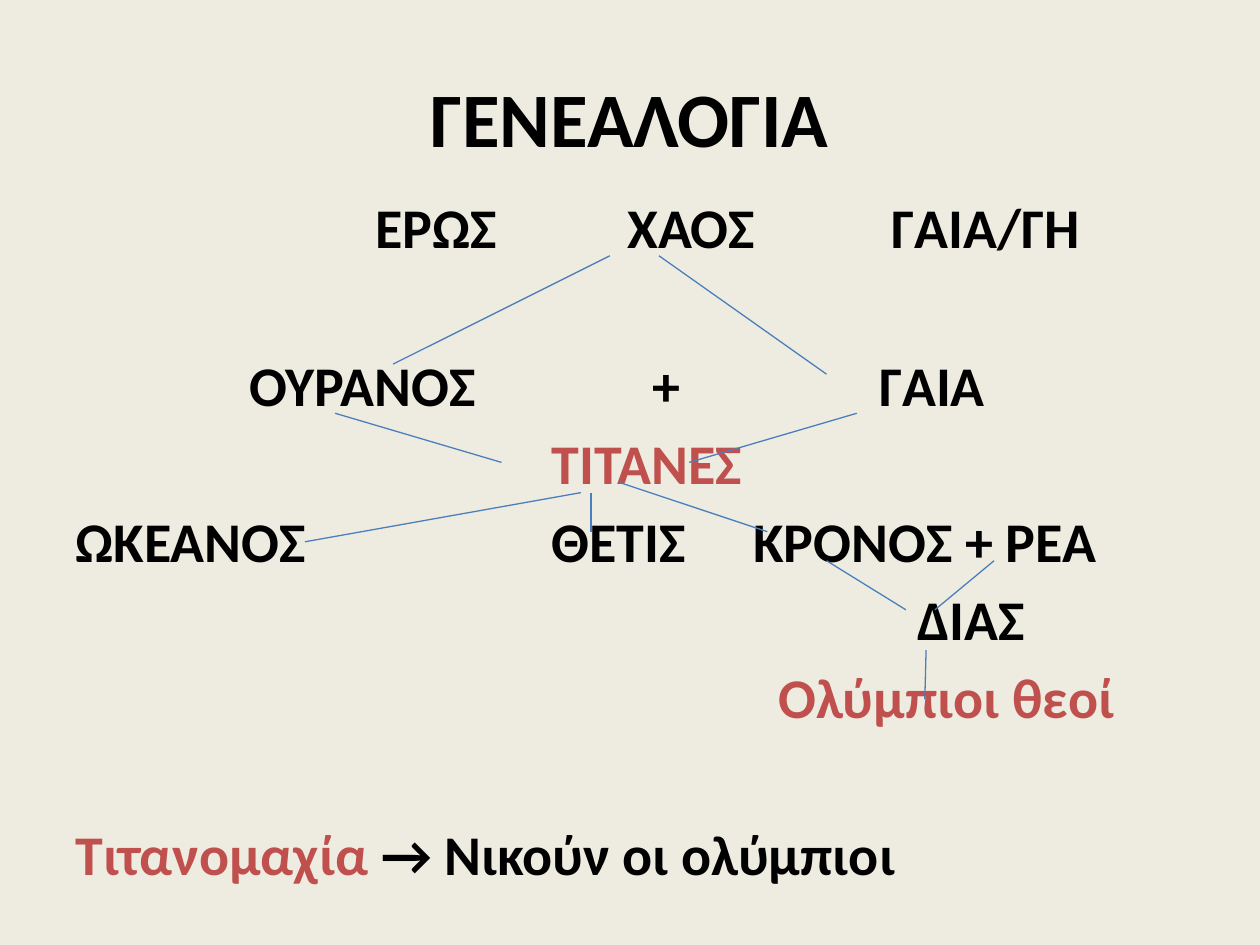
from dataclasses import dataclass

from lxml.etree import SubElement as Sub
from pptx import Presentation
from pptx.dml.color import RGBColor as Rgb
from pptx.enum.shapes import MSO_CONNECTOR as Conn
from pptx.enum.text import MSO_ANCHOR as Anchor, MSO_AUTO_SIZE as Fit, PP_ALIGN as Align
from pptx.oxml.ns import qn
from pptx.util import Inches, Pt


@dataclass(frozen=True)
class Theme:
    face: str = "Calibri"
    back: Rgb = Rgb(0xEE, 0xEC, 0xE1)
    ink: Rgb = Rgb(0, 0, 0)
    red: Rgb = Rgb(0xC0, 0x50, 0x4D)
    line: Rgb = Rgb(0x4B, 0x7E, 0xBC)
    head: Pt = Pt(44)
    body: Pt = Pt(32)
    gap: Pt = Pt(6.25)
    skip: Pt = Pt(51.5)
    thin: Pt = Pt(0.75)


THEME = Theme()
INK, RED = THEME.ink, THEME.red

ROWS = [
    (Pt(0), [2.38, 4.38, 6.48], [("\tΕΡΩΣ\tΧΑΟΣ\tΓΑΙΑ/ΓΗ", INK)]),
    (THEME.skip, [1.38, 4.58, 6.38], [("\tΟΥΡΑΝΟΣ\t+\tΓΑΙΑ", INK)]),
    (THEME.gap, [3.78], [("\tΤΙΤΑΝΕΣ", RED)]),
    (THEME.gap, [3.78, 5.38], [("ΩΚΕΑΝΟΣ\tΘΕΤΙΣ\tΚΡΟΝΟΣ + ΡΕΑ", INK)]),
    (THEME.gap, [6.68], [("\tΔΙΑΣ", INK)]),
    (THEME.gap, [5.58], [("\tΟλύμπιοι θεοί", RED)]),
    (THEME.skip, [], [("Τιτανομαχία ", RED), ("→ Νικούν οι ολύμπιοι", INK)]),
]

LINKS = [
    (4.34, 0.55, 2.62, 1.41),
    (4.73, 0.55, 6.06, 1.49),
    (2.16, 1.8, 3.48, 2.19),
    (6.3, 1.8, 4.97, 2.19),
    (4.11, 2.43, 1.92, 2.82),
    (4.19, 2.43, 4.19, 2.74),
    (4.42, 2.35, 5.59, 2.74),
    (6.06, 2.97, 6.69, 3.36),
    (7.39, 2.97, 6.92, 3.36),
    (6.85, 3.68, 6.84, 4.07),
]


def style(font, size):
    font.name, font.size, font.bold = THEME.face, size, True


def set_tabs(para, stops):
    if stops:
        tabs = Sub(para._p.get_or_add_pPr(), qn("a:tabLst"))
        for stop in stops:
            Sub(tabs, qn("a:tab"), pos=str(Inches(stop)), algn="l")


def add_title(slide, box):
    title = slide.shapes.title
    title.left, title.top, title.width, title.height = map(Inches, box)
    frame = title.text_frame
    frame.vertical_anchor = Anchor.MIDDLE
    para = frame.paragraphs[0]
    para.text = "ΓΕΝΕΑΛΟΓΙΑ"
    para.alignment = Align.CENTER
    style(para.font, THEME.head)
    para.font.color.rgb = INK


def add_names(slide, box):
    frame = slide.shapes.add_textbox(*map(Inches, box)).text_frame
    frame.word_wrap = True
    frame.auto_size = Fit.NONE
    frame.vertical_anchor = Anchor.TOP
    for i, (space, stops, parts) in enumerate(ROWS):
        para = frame.add_paragraph() if i else frame.paragraphs[0]
        set_tabs(para, stops)
        para.space_before = space
        style(para.font, THEME.body)
        for text, color in parts:
            run = para.add_run()
            run.text = text
            run.font.color.rgb = color


def add_links(slide, box):
    left, top = box[:2]
    for x1, y1, x2, y2 in LINKS:
        ends = map(Inches, (left + x1, top + y1, left + x2, top + y2))
        link = slide.shapes.add_connector(Conn.STRAIGHT, *ends)
        link.line.color.rgb = THEME.line
        link.line.width = THEME.thin
        Sub(link._element.spPr, qn("a:effectLst"))


def main():
    deck = Presentation()
    deck.slide_width, deck.slide_height = Inches(10), Inches(7.5)
    slide = deck.slides.add_slide(deck.slide_layouts[5])
    fill = slide.background.fill
    fill.solid()
    fill.fore_color.rgb = THEME.back
    tree = (0.5, 1.48, 9.27, 5.78)
    add_title(slide, (0.5, 0.3, 9, 1.25))
    add_names(slide, tree)
    add_links(slide, tree)
    deck.save("out.pptx")


if __name__ == "__main__":
    main()
